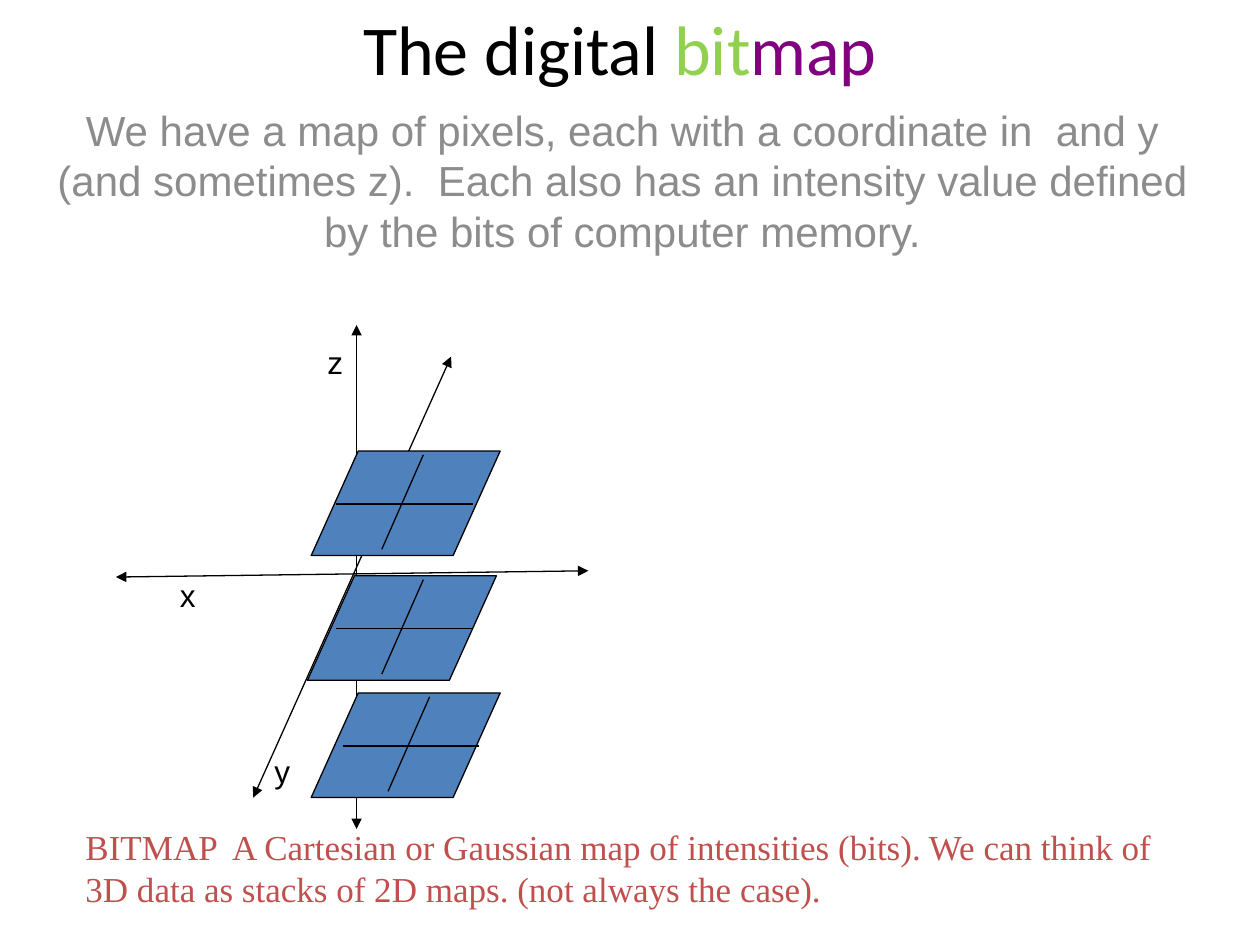
from lxml import etree
from pptx import Presentation
from pptx.dml.color import RGBColor
from pptx.enum import shapes, text
from pptx.oxml import ns
from pptx.util import Inches, Pt

BLACK = RGBColor(0x00, 0x00, 0x00)
GREEN = RGBColor(0x92, 0xD0, 0x50)
PURPLE = RGBColor(0x80, 0x00, 0x80)
GRAY = RGBColor(0x8C, 0x8C, 0x8C)
RED = RGBColor(0xC0, 0x50, 0x4D)
BLUE = RGBColor(0x4F, 0x81, 0xBD)

prs = Presentation()
prs.slide_width, prs.slide_height = Inches(10), Inches(7.5)
slide = prs.slides.add_slide(prs.slide_layouts[6])


def add_words(box, runs, font, size, align=text.PP_ALIGN.LEFT):
    frame = slide.shapes.add_textbox(*map(Inches, box)).text_frame
    frame.word_wrap = True
    paragraph = frame.paragraphs[0]
    paragraph.alignment = align
    paragraph.font.name, paragraph.font.size = font, Pt(size)
    for words, color in runs:
        run = paragraph.add_run()
        run.text = words
        run.font.color.rgb = color
    return frame


def add_line(start, end, arrows=False):
    line = slide.shapes.add_connector(
        shapes.MSO_CONNECTOR.STRAIGHT, *map(Inches, (*start, *end)))
    line.line.color.rgb = BLACK
    line.line.width = Pt(0.75)
    if arrows:
        outline = line.line._get_or_add_ln()
        for tag in ("a:headEnd", "a:tailEnd"):
            etree.SubElement(outline, ns.qn(tag), type="triangle")
    etree.SubElement(line._element.spPr, ns.qn("a:effectLst"))


title = add_words(
    (0.67, 0, 8.5, 0.75),
    [("The digital ", BLACK), ("bit", GREEN), ("map", PURPLE)],
    "Calibri", 40, text.PP_ALIGN.CENTER)
title.vertical_anchor = text.MSO_ANCHOR.MIDDLE

subtitle = add_words(
    (0.23, 0.78, 9.42, 1.92),
    [("We have a map of pixels, each with a coordinate in  and y (and sometimes z).  "
      "Each also has an intensity value defined by the bits of computer memory.", GRAY)],
    "Arial", 24, text.PP_ALIGN.CENTER)
subtitle.paragraphs[0].space_before = Pt(4.8)

definition = add_words(
    (0.58, 6.5, 8.67, 0.77),
    [("BITMAP  A Cartesian or Gaussian map of intensities (bits). "
      "We can think of 3D data as stacks of 2D maps. (not always the case).", RED)],
    "Times New Roman", 20)
definition.paragraphs[0].space_before = Pt(10)

for start, end in [((2.83, 6.58), (2.83, 2.58)),
                   ((0.92, 4.58), (4.67, 4.53)),
                   ((3.58, 2.83), (2.01, 6.33))]:
    add_line(start, end, arrows=True)

for axis, left, top in [("x", 1.33, 4.52), ("y", 2.08, 5.92), ("z", 2.5, 2.67)]:
    label = add_words((left, top, 0.33, 0.4), [(axis, BLACK)], "Arial", 18)
    label.paragraphs[0].space_before = Pt(9)

for left, top, cross_left in [(2.44, 4.57, 2.67), (2.47, 3.58, 2.67), (2.47, 5.5, 2.72)]:
    plane = slide.shapes.add_shape(
        shapes.MSO_SHAPE.PARALLELOGRAM, *map(Inches, (left, top, 1.5, 0.83)))
    plane.adjustments[0] = 0.45
    plane.shadow.inherit = False
    plane.fill.solid()
    plane.fill.fore_color.rgb = BLUE
    plane.line.color.rgb = BLACK
    plane.line.width = Pt(0.75)
    add_line((cross_left, top + 0.42), (cross_left + 1.08, top + 0.42))
    add_line((cross_left + 0.36, top + 0.78), (cross_left + 0.69, top + 0.03))

prs.save("out.pptx")
